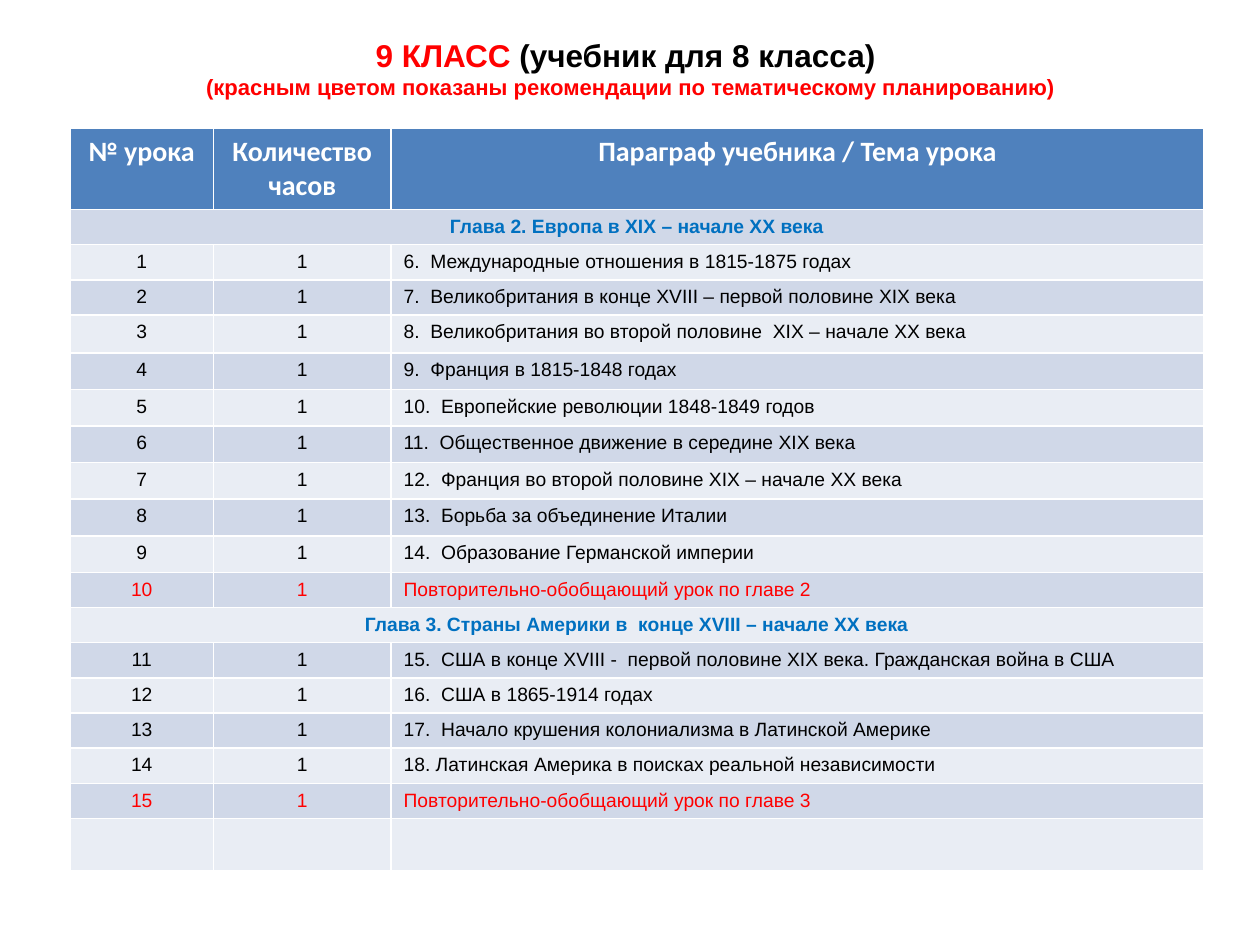
from dataclasses import dataclass

from pptx import Presentation
from pptx.dml.color import RGBColor
from pptx.enum.text import MSO_ANCHOR, MSO_AUTO_SIZE, PP_ALIGN
from pptx.util import Pt

CENTER, LEFT = PP_ALIGN.CENTER, PP_ALIGN.LEFT
MIDDLE = MSO_ANCHOR.MIDDLE
NO_AUTOFIT = MSO_AUTO_SIZE.NONE


@dataclass(frozen=True)
class Theme:
    black: str = "000000"
    white: str = "FFFFFF"
    red: str = "FF0000"
    chapter: str = "0070C0"
    header: str = "4F81BD"
    bands: tuple = ("D0D8E8", "E9EDF4")
    font: str = "Arial"
    header_font: str = "Calibri"
    title_size: float = 18
    note_size: float = 12.6
    header_size: float = 16
    body_size: float = 11


THEME = Theme()

HEADERS = ["№ урока", "Количество часов", "Параграф учебника / Тема урока"]
# Each chapter closes with a recommended revision lesson, shown in red.
CHAPTERS = [
    ("Глава 2. Европа в XIX – начале XX века", [
        "6.  Международные отношения в 1815-1875 годах",
        "7.  Великобритания в конце XVIII – первой половине XIX века",
        "8.  Великобритания во второй половине  XIX – начале XX века",
        "9.  Франция в 1815-1848 годах",
        "10.  Европейские революции 1848-1849 годов",
        "11.  Общественное движение в середине XIX века",
        "12.  Франция во второй половине XIX – начале XX века",
        "13.  Борьба за объединение Италии",
        "14.  Образование Германской империи",
        "Повторительно-обобщающий урок по главе 2",
    ]),
    ("Глава 3. Страны Америки в  конце XVIII – начале XX века", [
        "15.  США в конце XVIII -  первой половине XIX века. Гражданская война в США",
        "16.  США в 1865-1914 годах",
        "17.  Начало крушения колониализма в Латинской Америке",
        "18. Латинская Америка в поисках реальной независимости",
        "Повторительно-обобщающий урок по главе 3",
    ]),
]
COLUMN_WIDTHS = [82, 101.5, 464.5]
ROW_HEIGHTS = [45] + [20.1] * 3 + [21.7] + [20.9] * 6 + [20.1] * 7 + [30]


def format_run(r, size, color, bold=False, font=THEME.font):
    r.font.name = font
    r.font.size = Pt(size)
    r.font.bold = bold
    r.font.color.rgb = RGBColor.from_string(color)


def add_title(s, left, top, width, height):
    sp = s.shapes.title
    sp.left, sp.top, sp.width, sp.height = Pt(left), Pt(top), Pt(width), Pt(height)
    tf = sp.text_frame
    tf.auto_size = NO_AUTOFIT
    tf.word_wrap = True
    tf.vertical_anchor = MIDDLE
    p = tf.paragraphs[0]
    p.alignment = CENTER
    lines = [
        [("9 КЛАСС ", THEME.title_size, THEME.red),
         ("(учебник для 8 класса) ", THEME.title_size, THEME.black)],
        [("(красным цветом показаны рекомендации по тематическому планированию)",
          THEME.note_size, THEME.red)],
    ]
    for i, line in enumerate(lines):
        if i:
            p.add_line_break()
        for text, size, color in line:
            r = p.add_run()
            r.text = text
            format_run(r, size, color, bold=True)


def fill_cell(cell, text, align, size, color, bold=False, font=THEME.font):
    p = cell.text_frame.paragraphs[0]
    p.text = text
    p.alignment = align
    format_run(p.runs[0], size, color, bold, font)


def add_lesson_table(s, left, top):
    table = s.shapes.add_table(
        len(ROW_HEIGHTS), len(COLUMN_WIDTHS), Pt(left), Pt(top),
        Pt(sum(COLUMN_WIDTHS)), Pt(sum(ROW_HEIGHTS))).table
    for column, width in zip(table.columns, COLUMN_WIDTHS):
        column.width = Pt(width)
    for i, height in enumerate(ROW_HEIGHTS):
        table.rows[i].height = Pt(height)
        color = THEME.bands[(i - 1) % 2] if i else THEME.header
        for cell in table.rows[i].cells:
            cell.fill.solid()
            cell.fill.fore_color.rgb = RGBColor.from_string(color)

    for col, text in enumerate(HEADERS):
        fill_cell(table.cell(0, col), text, CENTER, THEME.header_size,
                  THEME.white, True, THEME.header_font)

    row, number = 1, 1
    for chapter, topics in CHAPTERS:
        cell = table.cell(row, 0)
        cell.merge(table.cell(row, len(COLUMN_WIDTHS) - 1))
        fill_cell(cell, chapter, CENTER, THEME.body_size, THEME.chapter, True)
        row += 1
        for topic in topics:
            color = THEME.red if topic == topics[-1] else THEME.black
            values = [(str(number), CENTER), ("1", CENTER), (topic, LEFT)]
            for col, (text, align) in enumerate(values):
                fill_cell(table.cell(row, col), text, align, THEME.body_size, color)
            row += 1
            number += 1


def main():
    prs = Presentation()
    prs.slide_width, prs.slide_height = Pt(720), Pt(540)
    s = prs.slides.add_slide(prs.slide_layouts[5])
    add_title(s, 36, 21.6, 648, 34.6)
    add_lesson_table(s, 40, 73.4)
    prs.save("out.pptx")


if __name__ == "__main__":
    main()
